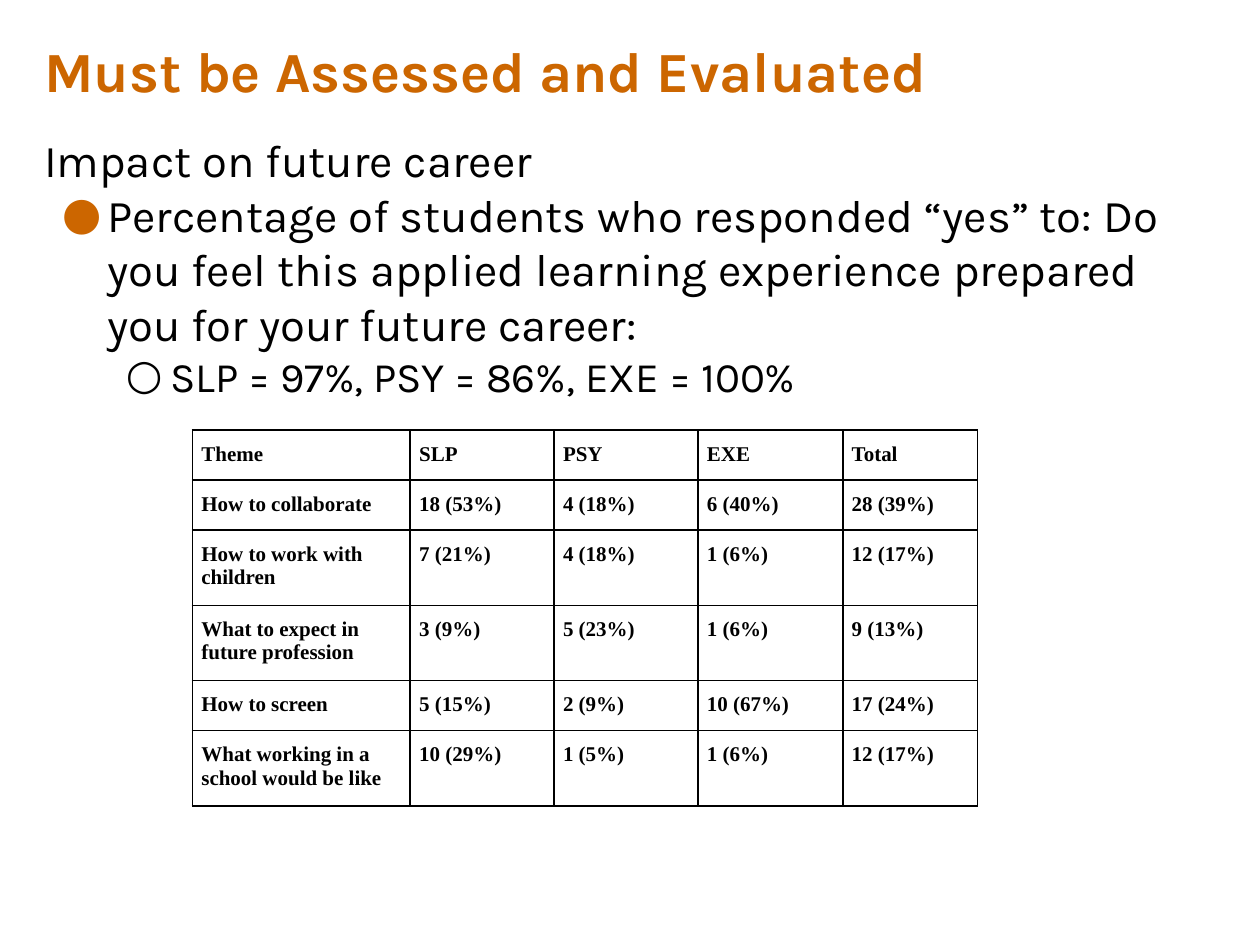
from lxml import etree
from pptx import Presentation
from pptx.dml.color import RGBColor
from pptx.enum.text import MSO_ANCHOR, PP_ALIGN
from pptx.oxml.ns import qn
from pptx.util import Cm, Pt

ORANGE = RGBColor(0xCC, 0x66, 0x00)
BLACK = RGBColor(0, 0, 0)
TOP = MSO_ANCHOR.TOP
LEFT = PP_ALIGN.LEFT

TITLE_FONT = {"name": "Karla", "size": Pt(32.4), "bold": True}
BODY_FONT = {"name": "Karla", "size": Pt(26)}
DETAIL_FONT = {"name": "Karla", "size": Pt(24)}
TABLE_FONT = {"name": "Times New Roman", "size": Pt(12), "bold": True}

SIDE, SLIDE_TEXT_WIDTH = 0.64, 23.7
BORDER_WIDTH = Pt(1)

# Text, font, level, left margin, hanging indent, bullet, bullet colour
IMPACT_POINTS = [
    ("Impact on future career", BODY_FONT, 0, 0, 0, None, None),
    ("Percentage of students who responded “yes” to: Do you feel this applied "
     "learning experience prepared you for your future career:",
     BODY_FONT, 0, 1.27, 0.91, "●", ORANGE),
    ("SLP = 97%, PSY = 86%, EXE = 100%", DETAIL_FONT, 1, 2.54, 0.89, "○", BLACK),
]

THEMES = [
    ("Theme", "SLP", "PSY", "EXE", "Total"),
    ("How to collaborate", "18 (53%)", "4 (18%)", "6 (40%)", "28 (39%)"),
    ("How to work with children", "7 (21%)", "4 (18%)", "1 (6%)", "12 (17%)"),
    ("What to expect in future profession", "3 (9%)", "5 (23%)", "1 (6%)", "9 (13%)"),
    ("How to screen", "5 (15%)", "2 (9%)", "10 (67%)", "17 (24%)"),
    ("What working in a school would be like", "10 (29%)", "1 (5%)", "1 (6%)", "12 (17%)"),
]
COLUMN_WIDTHS = [4.39, 2.9, 2.9, 2.92, 2.72]
ONE_LINE, TWO_LINES = 0.98, 1.45
ROW_HEIGHTS = [ONE_LINE, ONE_LINE, TWO_LINES, TWO_LINES, ONE_LINE, TWO_LINES]


def apply(target, values):
    for attribute, value in values.items():
        setattr(target, attribute, value)


class SlideBuilder:
    def __init__(self, slide):
        self.slide = slide

    def add_text(self, paragraph, text, font, color=BLACK):
        paragraph.alignment = LEFT
        run = paragraph.add_run()
        run.text = text
        apply(run.font, font)
        run.font.color.rgb = color

    def title(self, text, left, top, width, height):
        title = self.slide.shapes.title
        apply(title, {"left": Cm(left), "top": Cm(top),
                      "width": Cm(width), "height": Cm(height)})
        apply(title.text_frame, {"vertical_anchor": TOP, "word_wrap": True,
                                 "margin_top": 0, "margin_bottom": 0})
        self.add_text(title.text_frame.paragraphs[0], text, TITLE_FONT, ORANGE)

    def bullet(self, paragraph, margin, hanging, character, color):
        properties = paragraph._p.get_or_add_pPr()
        properties.set("marL", str(Cm(margin)))
        properties.set("indent", str(-Cm(hanging)))
        bullet_color = etree.SubElement(properties, qn("a:buClr"))
        etree.SubElement(bullet_color, qn("a:srgbClr"), val=str(color))
        etree.SubElement(properties, qn("a:buFont"), typeface="Karla")
        etree.SubElement(properties, qn("a:buChar"), char=character)

    def points(self, points, left, top, width, height):
        box = self.slide.shapes.add_textbox(Cm(left), Cm(top), Cm(width), Cm(height))
        frame = box.text_frame
        frame.word_wrap = True
        for index, (text, font, level, margin, hanging, character, color) in enumerate(points):
            paragraph = frame.add_paragraph() if index else frame.paragraphs[0]
            paragraph.level = level
            if character:
                self.bullet(paragraph, margin, hanging, character, color)
            self.add_text(paragraph, text, font)

    def borders(self, cell):
        properties = cell._tc.get_or_add_tcPr()
        for side in ("lnL", "lnR", "lnT", "lnB"):
            line = etree.SubElement(properties, qn(f"a:{side}"), w=str(BORDER_WIDTH))
            fill = etree.SubElement(line, qn("a:solidFill"))
            etree.SubElement(fill, qn("a:srgbClr"), val=str(BLACK))

    def table(self, rows, column_widths, row_heights, left, top):
        table = self.slide.shapes.add_table(
            len(rows), len(column_widths), Cm(left), Cm(top),
            Cm(sum(column_widths)), Cm(sum(row_heights))).table
        apply(table, {"first_row": False, "horz_banding": False})
        for column, width in zip(table.columns, column_widths):
            column.width = Cm(width)
        for row, height, texts in zip(table.rows, row_heights, rows):
            row.height = Cm(height)
            for cell, text in zip(row.cells, texts):
                apply(cell, {"margin_left": Cm(0.18), "margin_right": Cm(0.18),
                             "margin_top": Cm(0.25), "margin_bottom": Cm(0.25),
                             "vertical_anchor": TOP})
                self.borders(cell)
                cell.fill.background()
                self.add_text(cell.text_frame.paragraphs[0], text, TABLE_FONT)


def main():
    presentation = Presentation()
    apply(presentation, {"slide_width": Cm(25.4), "slide_height": Cm(19.05)})
    title_only = presentation.slide_layouts[5]
    builder = SlideBuilder(presentation.slides.add_slide(title_only))

    # Heading
    builder.title("Must be Assessed and Evaluated", SIDE, 0.72, SLIDE_TEXT_WIDTH, 2.64)
    # Career impact findings
    builder.points(IMPACT_POINTS, SIDE, 2.54, SLIDE_TEXT_WIDTH, 13.97)
    # Themes by programme
    builder.table(THEMES, COLUMN_WIDTHS, ROW_HEIGHTS, 3.88, 8.67)

    presentation.save("out.pptx")


if __name__ == "__main__":
    main()
